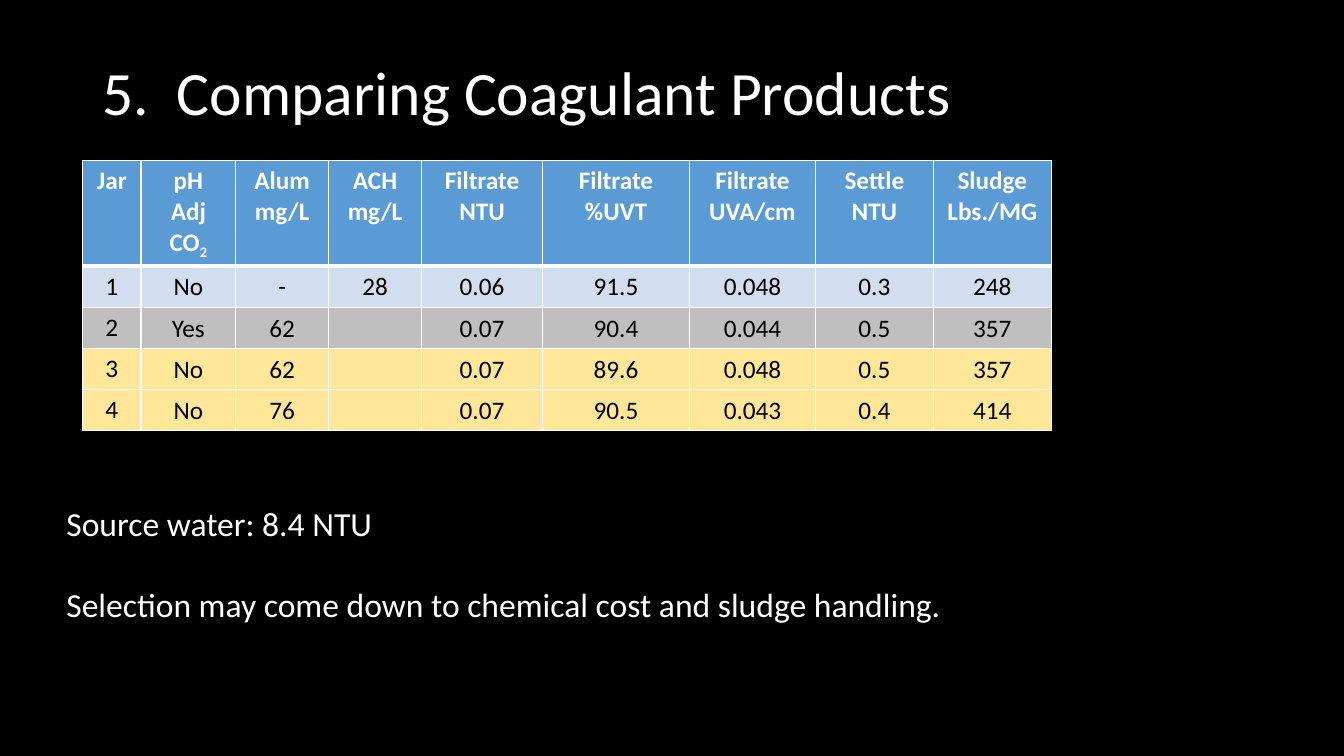
from dataclasses import dataclass

from lxml.etree import SubElement
from pptx import Presentation
from pptx.dml.color import RGBColor
from pptx.enum.text import MSO_ANCHOR as Anchor, MSO_AUTO_SIZE as AutoSize, PP_ALIGN as Align
from pptx.oxml import parse_xml
from pptx.oxml.ns import nsdecls, qn
from pptx.slide import Slide
from pptx.table import _Cell as Cell
from pptx.text.text import TextFrame
from pptx.util import Pt

BLACK = RGBColor(0x00, 0x00, 0x00)
WHITE = RGBColor(0xFF, 0xFF, 0xFF)
BLUE = RGBColor(0x5B, 0x9B, 0xD5)
PALE_BLUE = RGBColor(0xD2, 0xDE, 0xEF)
GRAY = RGBColor(0xBF, 0xBF, 0xBF)
YELLOW = RGBColor(0xFF, 0xE6, 0x99)

FONT = "Calibri"
HEADER_HEIGHT = 75.6
ROW_HEIGHT = 29.4
THIN, THICK = 1, 3


@dataclass(frozen=True)
class Column:
    heading: str
    width: float
    subscript: str = ""


@dataclass(frozen=True)
class JarTest:
    values: tuple[str, ...]
    fill: RGBColor


COLUMNS = (
    Column("Jar", 41.8),
    Column("pH\nAdj\nCO", 67.6, subscript="2"),
    Column("Alum\nmg/L", 66.4),
    Column("ACH\nmg/L", 66.4),
    Column("Filtrate\nNTU", 86.4),
    Column("Filtrate\n%UVT", 105),
    Column("Filtrate\nUVA/cm", 90),
    Column("Settle\nNTU", 84.2),
    Column("Sludge\nLbs./MG", 84.2),
)

JAR_TESTS = (
    JarTest(("1", "No", "-", "28", "0.06", "91.5", "0.048", "0.3", "248"), PALE_BLUE),
    JarTest(("2", "Yes", "62", "", "0.07", "90.4", "0.044", "0.5", "357"), GRAY),
    JarTest(("3", "No", "62", "", "0.07", "89.6", "0.048", "0.5", "357"), YELLOW),
    JarTest(("4", "No", "76", "", "0.07", "90.5", "0.043", "0.4", "414"), YELLOW),
)


def format_text(frame: TextFrame, size: float, color: RGBColor,
                align: Align = Align.LEFT, bold: bool = False) -> None:
    for paragraph in frame.paragraphs:
        paragraph.alignment = align
        paragraph.font.size = Pt(size)
        for run in paragraph.runs:
            run.font.name = FONT
            run.font.size = Pt(size)
            run.font.bold = bold
            run.font.color.rgb = color


def set_borders(cell: Cell, top: float, bottom: float) -> None:
    properties = cell._tc.get_or_add_tcPr()
    widths = {"lnL": THIN, "lnR": THIN, "lnT": top, "lnB": bottom}
    for index, (tag, width) in enumerate(widths.items()):
        line = parse_xml(f'<a:{tag} {nsdecls("a")} w="{Pt(width)}"/>')
        fill = SubElement(line, qn("a:solidFill"))
        SubElement(fill, qn("a:srgbClr"), val=str(WHITE))
        properties.insert(index, line)


def fill_cell(cell: Cell, text: str, fill: RGBColor) -> None:
    cell.text_frame.text = text
    cell.fill.solid()
    cell.fill.fore_color.rgb = fill


def add_title(slide: Slide) -> None:
    title = slide.shapes.title
    title.left, title.top, title.width, title.height = Pt(66), Pt(15.8), Pt(828), Pt(104.4)
    frame = title.text_frame
    frame.text = "5.  Comparing Coagulant Products"
    frame.vertical_anchor = Anchor.MIDDLE
    frame.auto_size = AutoSize.NONE
    frame.paragraphs[0].line_spacing = 0.9
    format_text(frame, 44, WHITE)


def add_jar_table(slide: Slide) -> None:
    width = sum(column.width for column in COLUMNS)
    height = HEADER_HEIGHT + ROW_HEIGHT * len(JAR_TESTS)
    table = slide.shapes.add_table(len(JAR_TESTS) + 1, len(COLUMNS),
                                   Pt(59), Pt(114.6), Pt(width), Pt(height)).table
    table.rows[0].height = Pt(HEADER_HEIGHT)

    # Header row
    for index, column in enumerate(COLUMNS):
        table.columns[index].width = Pt(column.width)
        cell = table.cell(0, index)
        fill_cell(cell, column.heading, BLUE)
        if column.subscript:
            run = cell.text_frame.paragraphs[-1].add_run()
            run.text = column.subscript
            run._r.get_or_add_rPr().set("baseline", "-25000")
        format_text(cell.text_frame, 18, WHITE, Align.CENTER, bold=True)
        set_borders(cell, THIN, THICK)

    # Jar rows
    for row, jar_test in enumerate(JAR_TESTS, start=1):
        table.rows[row].height = Pt(ROW_HEIGHT)
        for index, value in enumerate(jar_test.values):
            cell = table.cell(row, index)
            fill_cell(cell, value, jar_test.fill)
            format_text(cell.text_frame, 18, BLACK, Align.CENTER)
            set_borders(cell, THICK if row == 1 else THIN, THIN)
            if index > 0:
                cell.vertical_anchor = Anchor.MIDDLE
                cell.margin_left = cell.margin_right = cell.margin_top = Pt(0.75)
                cell.margin_bottom = Pt(0)


def add_notes_below_table(slide: Slide) -> None:
    box = slide.shapes.add_textbox(Pt(40.3), Pt(355.7), Pt(644.4), Pt(94.3))
    frame = box.text_frame
    frame.text = ("Source water: 8.4 NTU\n"
                  "Selection may come down to chemical cost and sludge handling.")
    frame.word_wrap = False
    frame.auto_size = AutoSize.SHAPE_TO_FIT_TEXT
    frame.paragraphs[1].space_before = Pt(28.8)
    format_text(frame, 24, WHITE)


def main() -> None:
    presentation = Presentation()
    presentation.slide_width, presentation.slide_height = Pt(960), Pt(540)
    slide = presentation.slides.add_slide(presentation.slide_layouts[5])
    slide.background.fill.solid()
    slide.background.fill.fore_color.rgb = BLACK
    add_title(slide)
    add_jar_table(slide)
    add_notes_below_table(slide)
    presentation.save("out.pptx")


if __name__ == "__main__":
    main()
